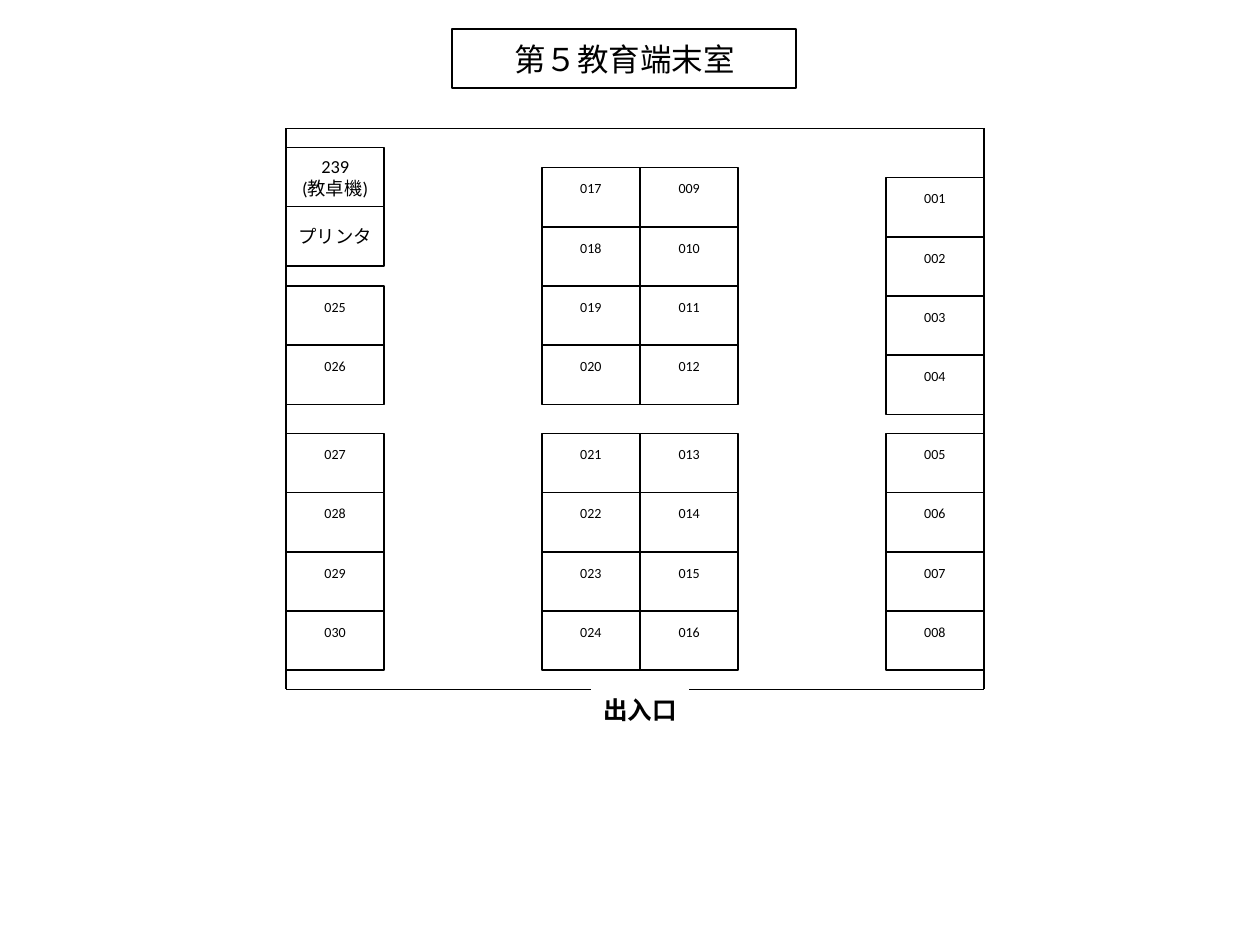
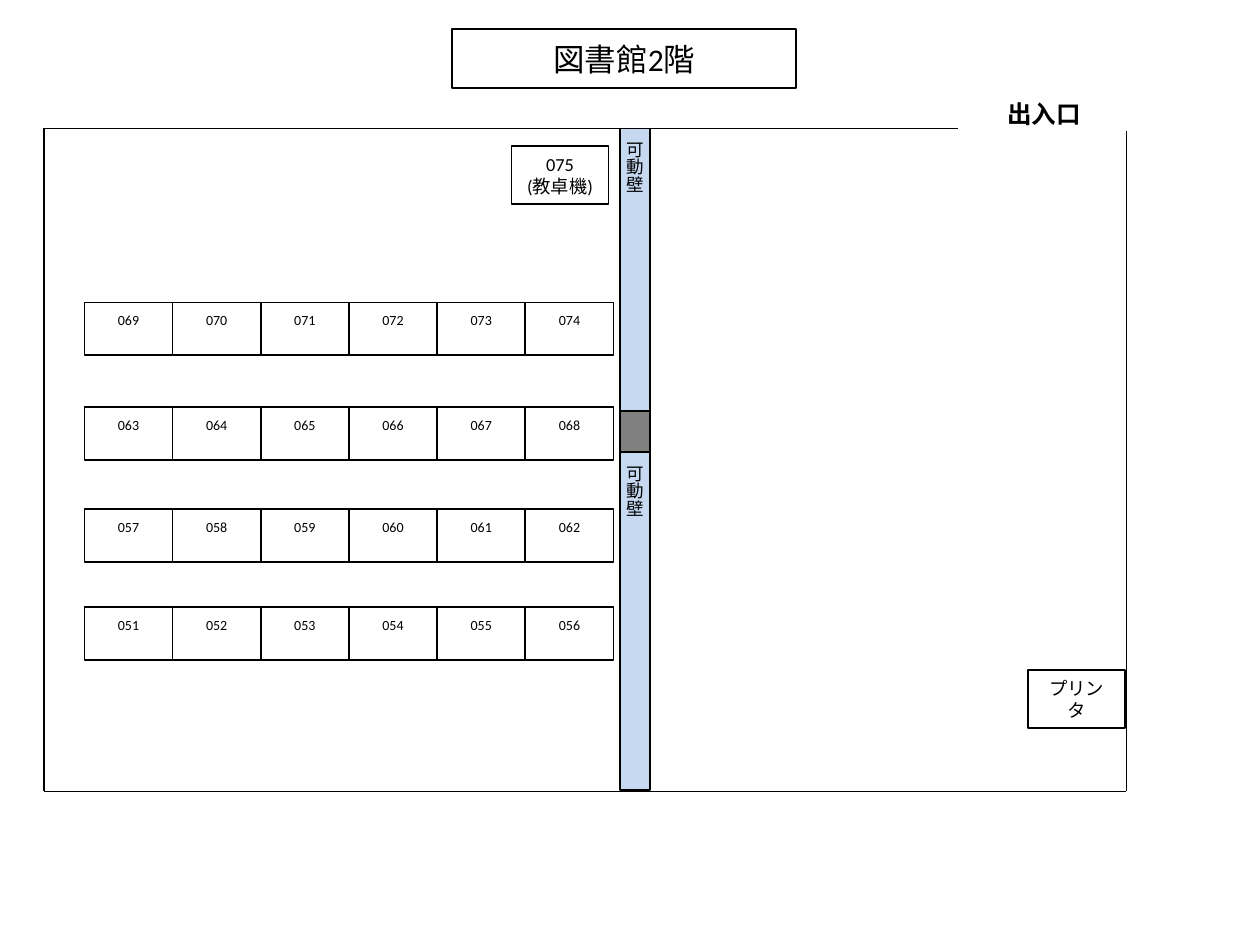
import pptx
import pptx.dml.color
import pptx.enum.shapes
import pptx.enum.text
import pptx.oxml
import pptx.util
from pptx.util import Inches

BLACK = pptx.dml.color.RGBColor(0x00, 0x00, 0x00)
WHITE = pptx.dml.color.RGBColor(0xFF, 0xFF, 0xFF)
WALL_BLUE = pptx.dml.color.RGBColor(0xC6, 0xD9, 0xF1)
PILLAR_GRAY = pptx.dml.color.RGBColor(0x80, 0x80, 0x80)
FONT = "Calibri"
LEFT = pptx.enum.text.PP_ALIGN.LEFT
CENTER = pptx.enum.text.PP_ALIGN.CENTER
TOP = pptx.enum.text.MSO_ANCHOR.TOP
MIDDLE = pptx.enum.text.MSO_ANCHOR.MIDDLE


def write_text(shape, text, size=10.5, bold=False, align=CENTER, anchor=MIDDLE,
               side_inset=0.1, top_inset=0.05, bottom_inset=0.05, vertical=False):
    frame = shape.text_frame
    frame.word_wrap = True
    frame.auto_size = pptx.enum.text.MSO_AUTO_SIZE.NONE
    frame.vertical_anchor = anchor
    frame.margin_left = frame.margin_right = Inches(side_inset)
    frame.margin_top = Inches(top_inset)
    frame.margin_bottom = Inches(bottom_inset)
    if vertical:
        frame._txBody.bodyPr.set("vert", "eaVert")
    frame.text = text
    for paragraph in frame.paragraphs:
        paragraph.alignment = align
        for run in paragraph.runs:
            run.font.name = FONT
            run.font.size = pptx.util.Pt(size)
            run.font.bold = bold
            run.font.color.rgb = BLACK


def add_box(slide, left, top, width, height, text="", fill=WHITE, **text_format):
    shape = slide.shapes.add_shape(
        pptx.enum.shapes.MSO_SHAPE.RECTANGLE,
        Inches(left), Inches(top), Inches(width), Inches(height))
    shape.shadow.inherit = False
    shape.fill.solid()
    shape.fill.fore_color.rgb = fill
    shape.line.color.rgb = BLACK
    shape.line.width = pptx.util.Pt(1)
    if text:
        write_text(shape, text, **text_format)


presentation = pptx.Presentation()
presentation.slide_width = Inches(10)
presentation.slide_height = Inches(7.5)

rooms = [
    ("第５教育端末室", (4.69, 5.47, 0.94), LEFT, [
        (2.27, 1.02, 2.27, 5.47),
        (2.27, 1.02, 7.81, 1.02),
        (7.81, 1.02, 7.81, 5.47),
        (2.27, 5.47, 4.69, 5.47),
        (5.47, 5.47, 7.81, 5.47),
    ]),
    ("図書館2階", (7.83, 0.74, 0.91), CENTER, [
        (0.35, 1.02, 0.35, 6.28),
        (0.35, 1.02, 7.6, 1.02),
        (8.94, 1.04, 8.94, 6.28),
        (0.35, 6.28, 8.94, 6.28),
    ]),
]

for name, (entrance_left, entrance_top, entrance_width), align, outer_walls in rooms:
    slide = presentation.slides.add_slide(presentation.slide_layouts[5])
    title = slide.shapes.title
    title.left, title.top = Inches(3.59), Inches(0.23)
    title.width, title.height = Inches(2.73), Inches(0.47)
    title.fill.solid()
    title.fill.fore_color.rgb = WHITE
    title.line.color.rgb = BLACK
    title.line.width = pptx.util.Pt(1)
    write_text(title, name, size=18)

    for start_x, start_y, end_x, end_y in outer_walls:
        connector = slide.shapes.add_connector(
            pptx.enum.shapes.MSO_CONNECTOR.STRAIGHT,
            Inches(start_x), Inches(start_y), Inches(end_x), Inches(end_y))
        connector.line.color.rgb = BLACK
        connector.line.width = pptx.util.Pt(0.75)
        connector._element.spPr.append(pptx.oxml.parse_xml(
            '<a:effectLst xmlns:a="http://schemas.openxmlformats.org/drawingml/2006/main"/>'))

    entrance = slide.shapes.add_textbox(
        Inches(entrance_left), Inches(entrance_top), Inches(entrance_width), Inches(0.34))
    write_text(entrance, "出入口", size=14, bold=True, align=align, anchor=TOP)

terminal_room, library = presentation.slides

SEAT_WIDTH, SEAT_HEIGHT = 0.78, 0.47
seat_blocks = [
    (1, 4, 7.03, 1.41), (5, 4, 7.03, 3.44),
    (9, 4, 5.08, 1.33), (13, 4, 5.08, 3.44),
    (17, 4, 4.3, 1.33), (21, 4, 4.3, 3.44),
    (25, 2, 2.27, 2.27), (27, 4, 2.27, 3.44),
]
for first_seat, count, left, top in seat_blocks:
    for row in range(count):
        add_box(terminal_room, left, top + row * SEAT_HEIGHT, SEAT_WIDTH, SEAT_HEIGHT,
                f"{first_seat + row:03d}", size=8, bottom_inset=0.19)
add_box(terminal_room, 2.27, 1.17, SEAT_WIDTH, SEAT_HEIGHT, "239\n(教卓機)")
add_box(terminal_room, 2.27, 1.64, SEAT_WIDTH, SEAT_HEIGHT, "プリンタ", side_inset=0.09)

DESK_WIDTH, DESK_HEIGHT = 0.7, 0.42
for first_seat, top in [(69, 2.4), (63, 3.23), (57, 4.04), (51, 4.82)]:
    for column in range(6):
        add_box(library, 0.67 + column * DESK_WIDTH, top, DESK_WIDTH, DESK_HEIGHT,
                f"{first_seat + column:03d}", size=8, bottom_inset=0.19)
add_box(library, 4.06, 1.16, 0.77, 0.46, "075\n(教卓機)")
add_box(library, 8.16, 5.32, 0.77, 0.46, "プリンタ")
add_box(library, 4.92, 3.2, 0.24, 0.39, fill=PILLAR_GRAY)
for top, height in [(3.59, 2.68), (1.02, 2.24)]:
    add_box(library, 4.92, top, 0.24, height, "可動壁", fill=WALL_BLUE, size=10,
            align=LEFT, side_inset=0, top_inset=0.1, bottom_inset=0.1, vertical=True)

presentation.save("out.pptx")
